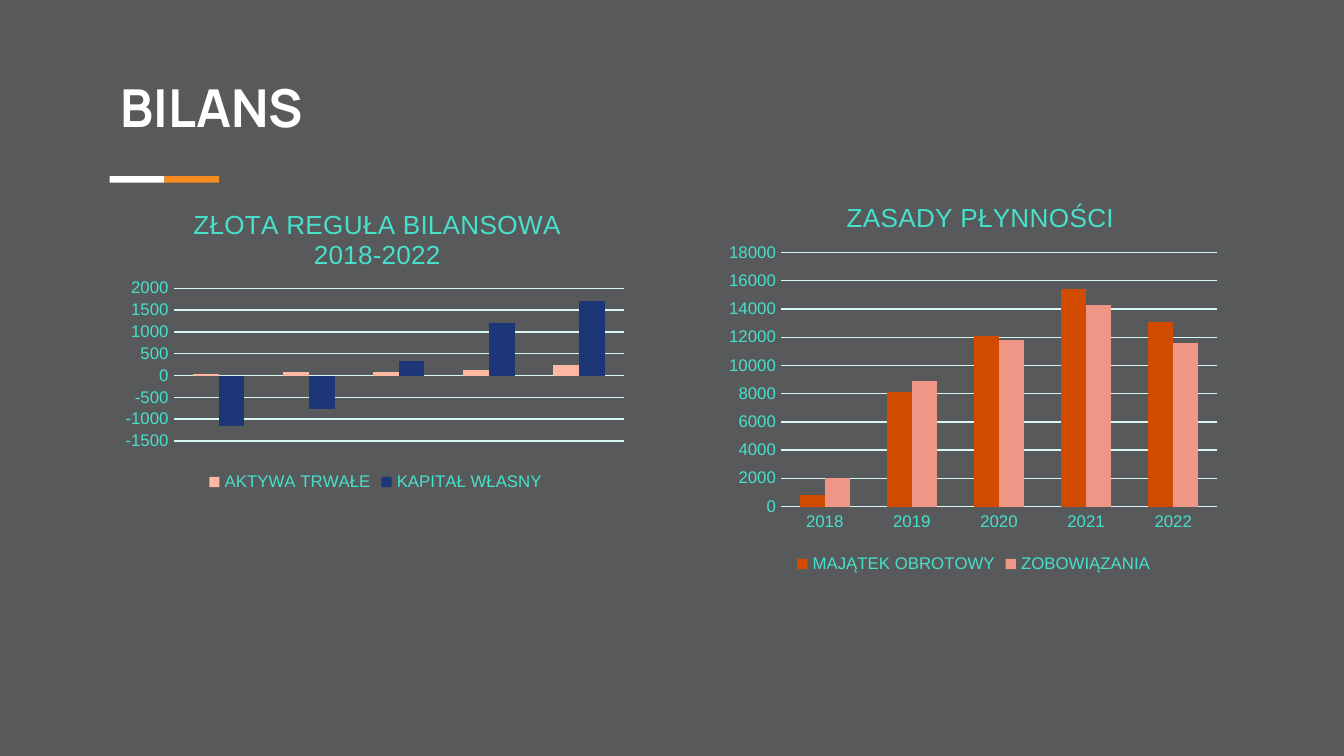
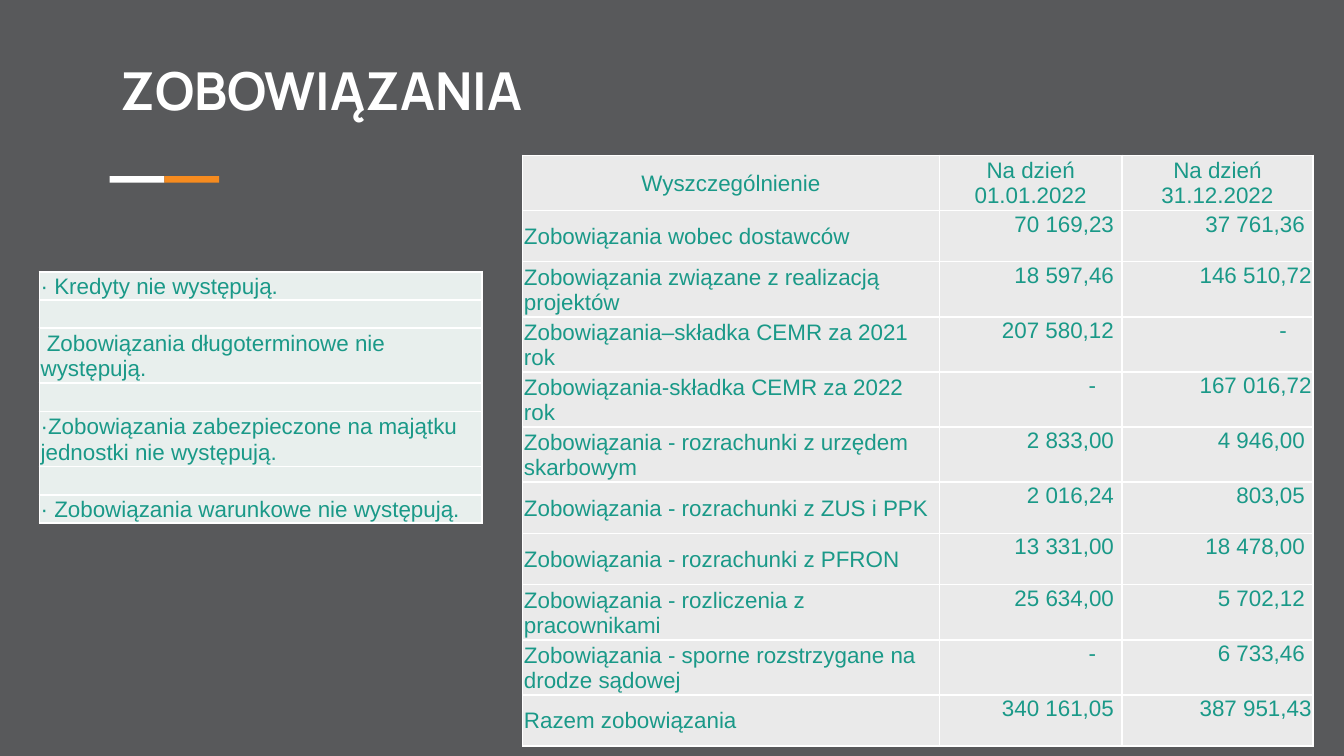
from pptx import Presentation
from pptx.chart.data import CategoryChartData
from pptx.dml.color import RGBColor
from pptx.enum.chart import XL_CHART_TYPE, XL_LEGEND_POSITION, XL_TICK_MARK, XL_TICK_LABEL_POSITION
from pptx.enum.shapes import MSO_SHAPE
from pptx.enum.text import MSO_ANCHOR, PP_ALIGN
from pptx.oxml import parse_xml
from pptx.oxml.ns import nsdecls
from pptx.util import Pt

# Content
COLORS = {
    "back": "58595B", "white": "FFFFFF", "orange": "F68B1F",
    "teal": "1A9988", "mint": "47E0CB", "grid": "D5F8F3",
    "gray": "EAEAEA", "pale": "E8EFED",
}

CHARTS = [
    {
        "box": (62.6, 99.4, 277.2, 167),
        "title": "ZŁOTA REGUŁA BILANSOWA\n2018-2022", "head": (0.14, 0.06),
        "plot": (0.11, 0.33, 0.87, 0.49),
        "cats": ["1", "2", "3", "4", "5"], "shown": False,
        "series": [
            ("AKTYWA TRWAŁE", (30, 90, 70, 120, 240), "FFB8A2"),
            ("KAPITAŁ WŁASNY", (-1160, -760, 330, 1200, 1710), "1C3678"),
        ],
    },
    {
        "box": (385.9, 94.3, 271.4, 216),
        "title": "ZASADY PŁYNNOŚCI", "head": (0.24, 0.05),
        "plot": (0.12, 0.19, 0.86, 0.63),
        "cats": ["2018", "2019", "2020", "2021", "2022"], "shown": True,
        "series": [
            ("MAJĄTEK OBROTOWY", (800, 8100, 12100, 15400, 13100), "D14C00"),
            ("ZOBOWIĄZANIA", (2000, 8900, 11800, 14300, 11600), "F09687"),
        ],
    },
]

DEBTS = [
    ("Wyszczególnienie", "Na dzień 01.01.2022", "Na dzień 31.12.2022"),
    ("Zobowiązania wobec dostawców", "70 169,23", "37 761,36"),
    ("Zobowiązania związane z realizacją projektów", "18 597,46", "146 510,72"),
    ("Zobowiązania–składka CEMR za 2021 rok", "207 580,12", "-"),
    ("Zobowiązania-składka CEMR za 2022 rok", "-", "167 016,72"),
    ("Zobowiązania - rozrachunki z urzędem skarbowym", "2 833,00", "4 946,00"),
    ("Zobowiązania - rozrachunki z ZUS i PPK", "2 016,24", "803,05"),
    ("Zobowiązania - rozrachunki z PFRON", "13 331,00", "18 478,00"),
    ("Zobowiązania - rozliczenia z pracownikami", "25 634,00", "5 702,12"),
    ("Zobowiązania - sporne rozstrzygane na drodze sądowej", "-", "6 733,46"),
    ("Razem zobowiązania", "340 161,05", "387 951,43"),
]

NOTES = [
    ("· Kredyty nie występują.",),
    ("",),
    (" Zobowiązania długoterminowe nie występują.",),
    ("",),
    ("·Zobowiązania zabezpieczone na majątku jednostki nie występują.",),
    ("",),
    ("· Zobowiązania warunkowe nie występują.",),
]

# Formats
TITLE = {"size": Pt(28), "name": "Manrope", "bold": True}
CELL = {"size": Pt(12), "name": "Arial"}
BASE = {"size": Pt(10), "name": "Arial"}
LABEL = {"size": Pt(9), "name": "Arial"}
HEAD = {"size": Pt(14), "name": "Arial", "bold": False}
INSETS = {"margin_left": Pt(0.7), "margin_right": Pt(0.7),
          "margin_top": Pt(0.7), "margin_bottom": Pt(0)}
ONE, TWO = 14.4, 27.5  # heights of rows with one and two lines


def tint(name):
    return RGBColor.from_string(COLORS.get(name, name))


def put(obj, vals):
    for key, val in vals.items():
        setattr(obj, key, val)


def style(font, vals, color):
    put(font, vals)
    font.color.rgb = tint(color)


def paint(fill, color):
    fill.solid()
    fill.fore_color.rgb = tint(color)


def pts(*nums):
    return [Pt(num) for num in nums]


# Shared slide parts
def add_page(deck, title, top, high):
    page = deck.slides.add_slide(deck.slide_layouts[6])
    paint(page.background.fill, "back")
    for num, color in enumerate(("white", "orange")):
        bar = page.shapes.add_shape(
            MSO_SHAPE.RECTANGLE, *pts(58.8 + 29.3 * num, 94.3, 29.3, 3.6))
        bar.shadow.inherit = False
        paint(bar.fill, color)
        bar.line.fill.background()
    frame = page.shapes.add_textbox(*pts(57.6, top, 605.5, high)).text_frame
    put(frame, {"word_wrap": True, "vertical_anchor": MSO_ANCHOR.TOP})
    put(frame, dict.fromkeys(INSETS, Pt(7.2)))
    run = frame.paragraphs[0].add_run()
    run.text = title
    style(run.font, TITLE, "white")
    return page


# Charts
def layout(keys, nums, inner=False):
    target = '<c:layoutTarget val="inner"/>' if inner else ""
    modes = "".join(f'<c:{key}Mode val="edge"/>' for key in "xy")
    sizes = "".join(f'<c:{key} val="{num}"/>' for key, num in zip(keys, nums))
    return parse_xml(f'<c:layout {nsdecls("c")}><c:manualLayout>{target}{modes}'
                     f'{sizes}</c:manualLayout></c:layout>')


def add_graph(page, info):
    data = CategoryChartData()
    data.categories = info["cats"]
    for name, vals, _ in info["series"]:
        data.add_series(name, vals)
    chart = page.shapes.add_chart(
        XL_CHART_TYPE.COLUMN_CLUSTERED, *pts(*info["box"]), data).chart
    style(chart.font, BASE, "teal")

    # Title and plot places
    frame = chart.chart_title.text_frame
    frame.text = info["title"]
    for para in frame.paragraphs:
        style(para.runs[0].font, HEAD, "mint")
    chart.chart_title.include_in_layout = False
    title = chart.chart_title._element
    area = chart.plots[0]._element.getparent()
    for node in (title, area):
        for old in node.findall("{*}layout"):
            node.remove(old)
    title.find("{*}tx").addnext(layout("xy", info["head"]))
    area.insert(0, layout("xywh", info["plot"], True))

    # Legend and axes
    chart.has_legend = True
    put(chart.legend, {"position": XL_LEGEND_POSITION.BOTTOM,
                       "include_in_layout": False})
    style(chart.legend.font, LABEL, "mint")
    for axis in (chart.category_axis, chart.value_axis):
        put(axis, {"major_tick_mark": XL_TICK_MARK.NONE,
                   "minor_tick_mark": XL_TICK_MARK.NONE,
                   "tick_label_position": XL_TICK_LABEL_POSITION.NEXT_TO_AXIS})
        axis.format.line.fill.background()
        style(axis.tick_labels.font, LABEL, "mint")
    chart.category_axis.visible = info["shown"]
    line = chart.value_axis.major_gridlines.format.line
    line.width = Pt(0.75)
    line.color.rgb = tint("grid")

    # Columns
    plot = chart.plots[0]
    put(plot, {"gap_width": 150, "overlap": 0, "vary_by_categories": False})
    for part, (_, _, color) in zip(plot.series, info["series"]):
        part.invert_if_negative = False
        paint(part.format.fill, color)


# Tables
def edge(cell):
    props = cell._tc.get_or_add_tcPr()
    for side in "LRTB":
        props.append(parse_xml(
            f'<a:ln{side} {nsdecls("a")} w="{Pt(1)}"><a:solidFill>'
            f'<a:srgbClr val="{COLORS["white"]}"/></a:solidFill></a:ln{side}>'))


def add_grid(page, left, top, cols, highs, rows, fill):
    table = page.shapes.add_table(
        len(rows), len(cols), *pts(left, top, sum(cols), sum(highs))).table
    put(table, {"first_row": False, "horz_banding": False})
    for col, wide in zip(table.columns, cols):
        col.width = Pt(wide)
    for row, high, texts in zip(table.rows, highs, rows):
        row.height = Pt(high)
        for cell, text in zip(row.cells, texts):
            edge(cell)
            paint(cell.fill, fill)
            put(cell, {**INSETS, "vertical_anchor": MSO_ANCHOR.MIDDLE})
            para = cell.text_frame.paragraphs[0]
            if text:
                run = para.add_run()
                run.text = text
                style(run.font, CELL, "teal")
            else:
                para._p.append(parse_xml(
                    f'<a:endParaRPr {nsdecls("a")} sz="1200"/>'))
    return table


def align(table):
    for num, row in enumerate(table.rows):
        for col, cell in enumerate(row.cells):
            para = cell.text_frame.paragraphs[0]
            if num == 0:
                para.alignment = PP_ALIGN.CENTER
            elif col:
                para.alignment = PP_ALIGN.RIGHT
                tight = col == 2 and len(cell.text) > 9
                gap = 14 if cell.text == "-" else 0.7 if tight else 4.3
                put(cell, {"vertical_anchor": MSO_ANCHOR.TOP,
                           "margin_right": Pt(gap)})


def main():
    deck = Presentation()
    put(deck, {"slide_width": Pt(720), "slide_height": Pt(405)})

    page = add_page(deck, "BILANS", 33.1, 308.2)
    for info in CHARTS:
        add_graph(page, info)

    page = add_page(deck, "ZOBOWIĄZANIA", 23.8, 352.8)
    align(add_grid(page, 280, 83.2, (223.2, 97.9, 102.3),
                   [TWO] * len(DEBTS), DEBTS, "gray"))
    highs = [TWO if len(text) > 40 else ONE for text, in NOTES]
    add_grid(page, 21.1, 145.6, (237,), highs, NOTES, "pale")
    deck.save("out.pptx")


if __name__ == "__main__":
    main()
